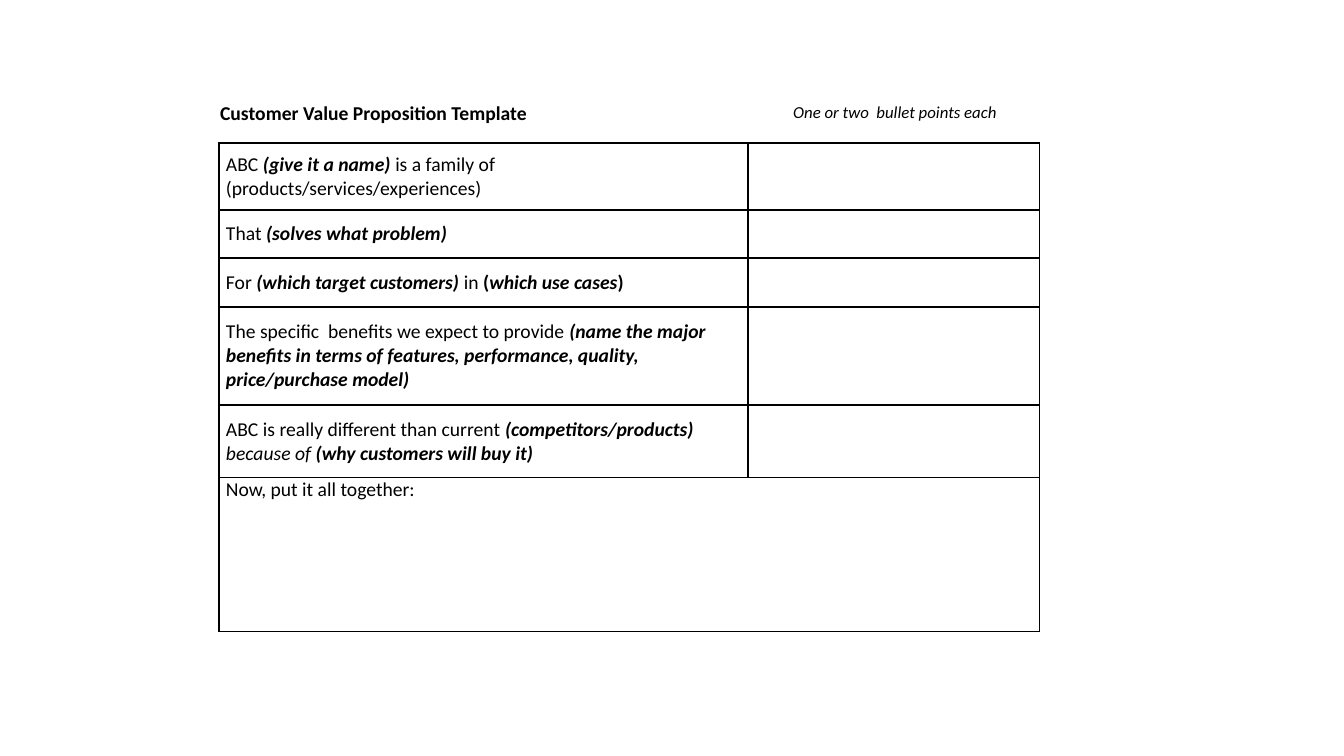
from lxml import etree
from pptx import Presentation
from pptx.dml.color import RGBColor
from pptx.enum.text import MSO_ANCHOR, MSO_AUTO_SIZE, PP_ALIGN
from pptx.oxml.ns import qn
from pptx.util import Emu, Pt

TOP, MIDDLE = MSO_ANCHOR.TOP, MSO_ANCHOR.MIDDLE
LEFT, CENTER = PP_ALIGN.LEFT, PP_ALIGN.CENTER
NO_AUTOFIT = MSO_AUTO_SIZE.NONE
BLACK = RGBColor(0, 0, 0)
FONT = "Calibri"
EMU_PER_PX = 914400 / 100.8
TITLE_ONLY = 5

PLAIN, BOLD, ITALIC, BOLD_ITALIC = (False, False), (True, False), (False, True), (True, True)

COLUMN_WIDTHS = [529, 292]
PROMPTS = [
    (67, 0, [("ABC ", PLAIN), ("(give it a name) ", BOLD_ITALIC),
             ("is a family of (products/services/experiences)", PLAIN)]),
    (48, 18, [("That ", PLAIN), ("(solves what problem)", BOLD_ITALIC)]),
    (49, 18, [("For ", PLAIN), ("(which target customers) ", BOLD_ITALIC), ("in", PLAIN),
              (" (", BOLD), ("which use cases", BOLD_ITALIC), (")", BOLD)]),
    (98, 0, [("The specific  benefits we expect to provide ", PLAIN),
             ("(name the major benefits in terms of features, performance, quality, "
              "price/purchase model)", BOLD_ITALIC)]),
    (73, 0, [("ABC is really different than current ", PLAIN),
             ("(competitors/products) ", BOLD_ITALIC), ("because of ", ITALIC),
             ("(why customers will buy it)", BOLD_ITALIC)]),
    (154, 0, [("Now, put it all together:", PLAIN)]),
]


def px(length):
    return Emu(round(length * EMU_PER_PX))


def add_spans(para, spans, size):
    for text, (bold, italic) in spans:
        span = para.add_run()
        span.text = text
        span.font.name = FONT
        span.font.size = Pt(size)
        span.font.bold = bold
        span.font.italic = italic
        span.font.color.rgb = BLACK


def fill_box(box, spans, size, anchor, align):
    frame = box.text_frame
    frame.word_wrap = True
    frame.auto_size = NO_AUTOFIT
    frame.vertical_anchor = anchor
    para = frame.paragraphs[0]
    para.alignment = align
    add_spans(para, spans, size)


def add_title(page, left, top, width, height, text):
    title = page.shapes.title
    title.left, title.top, title.width, title.height = map(px, (left, top, width, height))
    fill_box(title, [(text, BOLD)], 14, TOP, LEFT)


def add_note(page, left, top, width, height, text):
    box = page.shapes.add_textbox(*map(px, (left, top, width, height)))
    fill_box(box, [(text, ITALIC)], 12, MIDDLE, CENTER)


def outline_cell(cell):
    cell.fill.background()
    properties = cell._tc.get_or_add_tcPr()
    for index, side in enumerate(("a:lnL", "a:lnR", "a:lnT", "a:lnB")):
        line = etree.Element(qn(side), w=str(Pt(1)))
        fill = etree.SubElement(line, qn("a:solidFill"))
        etree.SubElement(fill, qn("a:srgbClr"), val=str(BLACK))
        properties.insert(index, line)


def add_prompt_table(page, left, top):
    width, height = sum(COLUMN_WIDTHS), sum(prompt[0] for prompt in PROMPTS)
    frame = page.shapes.add_table(len(PROMPTS), len(COLUMN_WIDTHS),
                                  *map(px, (left, top, width, height)))
    table = frame.table
    table.first_row = False
    table.horz_banding = False
    for column, column_width in zip(table.columns, COLUMN_WIDTHS):
        column.width = px(column_width)
    for row, (row_height, space_after, spans) in zip(table.rows, PROMPTS):
        row.height = px(row_height)
        for cell in row.cells:
            outline_cell(cell)
            cell.margin_left = cell.margin_right = px(7)
            cell.margin_top = cell.margin_bottom = 0
            cell.vertical_anchor = MIDDLE
        para = row.cells[0].text_frame.paragraphs[0]
        para.space_after = Pt(space_after)
        add_spans(para, spans, 14)
    last = len(PROMPTS) - 1
    summary = table.cell(last, 0)
    summary.merge(table.cell(last, 1))
    summary.vertical_anchor = TOP


def main():
    deck = Presentation()
    deck.slide_width, deck.slide_height = px(1344), px(756)
    page = deck.slides.add_slide(deck.slide_layouts[TITLE_ONLY])
    add_prompt_table(page, 219, 143)
    add_title(page, 210, 96, 907, 55, "Customer Value Proposition Template")
    add_note(page, 731, 84, 328, 56, "One or two  bullet points each")
    deck.save("out.pptx")


if __name__ == "__main__":
    main()
